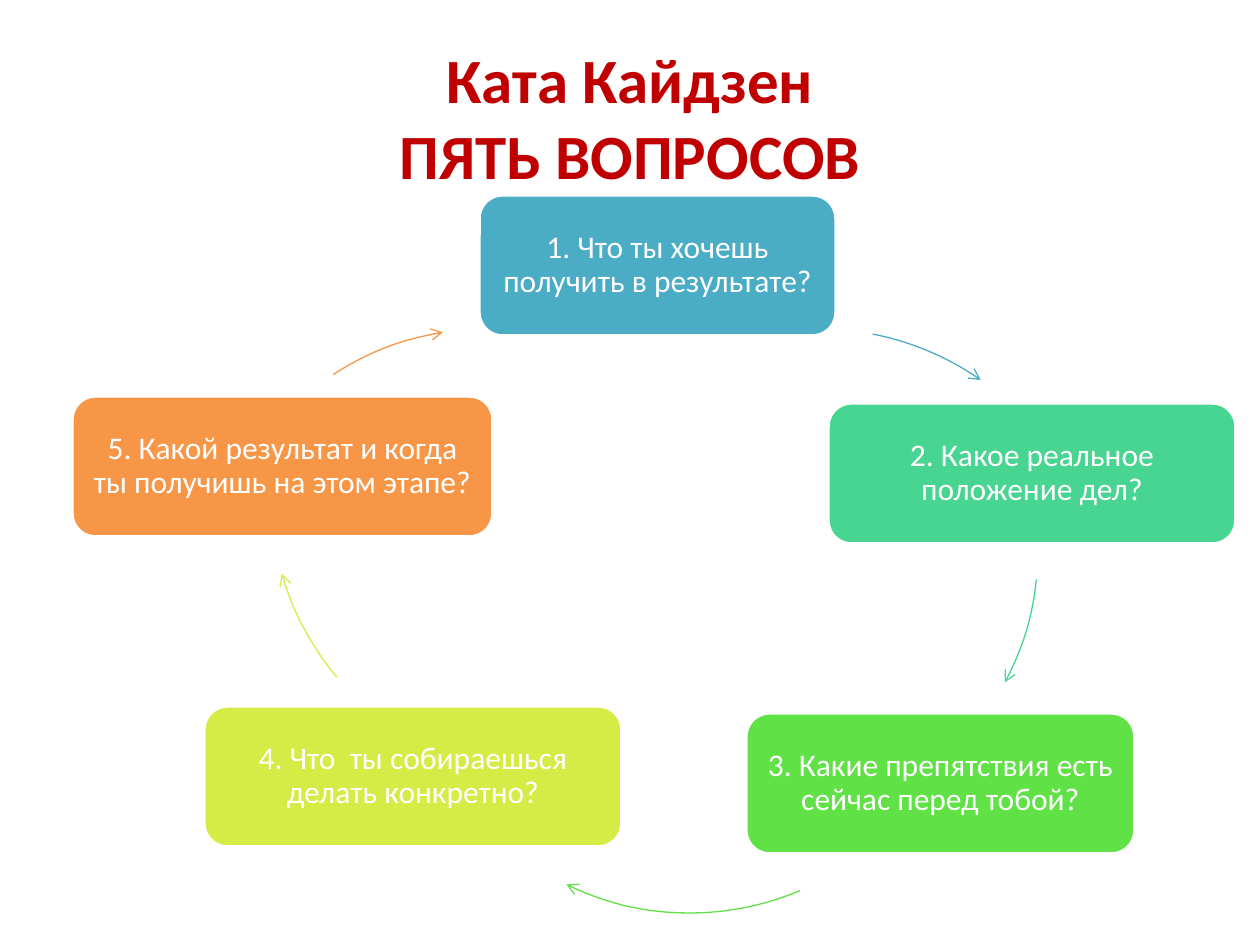
from lxml.etree import SubElement
from pptx import Presentation
from pptx.dml.color import RGBColor
from pptx.enum.shapes import MSO_SHAPE as Preset
from pptx.enum.text import MSO_ANCHOR as Anchor, PP_ALIGN as Align
from pptx.oxml.ns import qn
from pptx.util import Pt

PX = 914400 / 126
THEME = {
    "font": "Calibri",
    "title": "C00000", "title_size": 36,
    "card_text": "FFFFFF", "card_size": 18, "card_border": "FFFFFF",
    "steps": ["4BACC6", "48D491", "60E146", "D5EC46", "F79646"],
}
CARD_HEIGHT = 141
ARC_DIAMETER = 564


def px(*lengths):
    return [round(length * PX) for length in lengths]


def write(shape, text, *, size, color, bold=False, margin=9, spacing=1.0):
    """Put one centred paragraph in the middle of the shape."""
    frame = shape.text_frame
    frame.word_wrap = True
    frame.vertical_anchor = Anchor.MIDDLE
    frame.margin_left, frame.margin_right, frame.margin_top, frame.margin_bottom = px(*[margin] * 4)
    para = frame.paragraphs[0]
    para.text = text
    para.alignment = Align.CENTER
    para.line_spacing = spacing
    for span in para.runs:
        span.font.name = THEME["font"]
        span.font.size = Pt(size)
        span.font.bold = bold
        span.font.color.rgb = RGBColor.from_string(color)


deck = Presentation()
deck.slide_width, deck.slide_height = px(1260, 945)
page = deck.slides.add_slide(deck.slide_layouts[6])

title = page.shapes.add_textbox(*px(63, 38, 1134, 157))
write(title, "Ката Кайдзен\vПЯТЬ ВОПРОСОВ", size=THEME["title_size"],
      color=THEME["title"], bold=True)

# question, card (left, top, width), arc (left, top), arc angles (start, end) in degrees
steps = [
    ("1. Что ты хочешь получить в результате?", (479, 195, 357), (537, 329), (281, 305)),
    ("2. Какое реальное положение дел?", (828, 403, 408), (474, 268), (6, 28)),
    ("3. Какие препятствия есть сейчас перед тобой?", (746, 713, 389), (408, 349), (67, 116)),
    ("4. Что  ты собираешься делать конкретно?", (204, 706, 418), (271, 214), (140, 164)),
    ("5. Какой результат и когда ты получишь на этом этапе?", (72, 396, 421), (205, 329), (237, 261)),
]

for (question, card_place, arc_place, angles), hue in zip(steps, THEME["steps"]):
    color = RGBColor.from_string(hue)

    card = page.shapes.add_shape(Preset.ROUNDED_RECTANGLE, *px(*card_place, CARD_HEIGHT))
    card.shadow.inherit = False
    card.fill.solid()
    card.fill.fore_color.rgb = color
    card.line.color.rgb = RGBColor.from_string(THEME["card_border"])
    card.line.width = Pt(2)
    write(card, question, size=THEME["card_size"], color=THEME["card_text"], spacing=0.9)

    arc = page.shapes.add_shape(Preset.ARC, *px(*arc_place, ARC_DIAMETER, ARC_DIAMETER))
    arc.shadow.inherit = False
    arc.fill.background()
    arc.line.color.rgb = color
    arc.line.width = Pt(0.75)
    for index, angle in enumerate(angles):
        arc.adjustments[index] = angle * 0.6  # 60000 units a degree, 100000 to one
    SubElement(arc.line._get_or_add_ln(), qn("a:tailEnd"), type="arrow")

deck.save("out.pptx")
